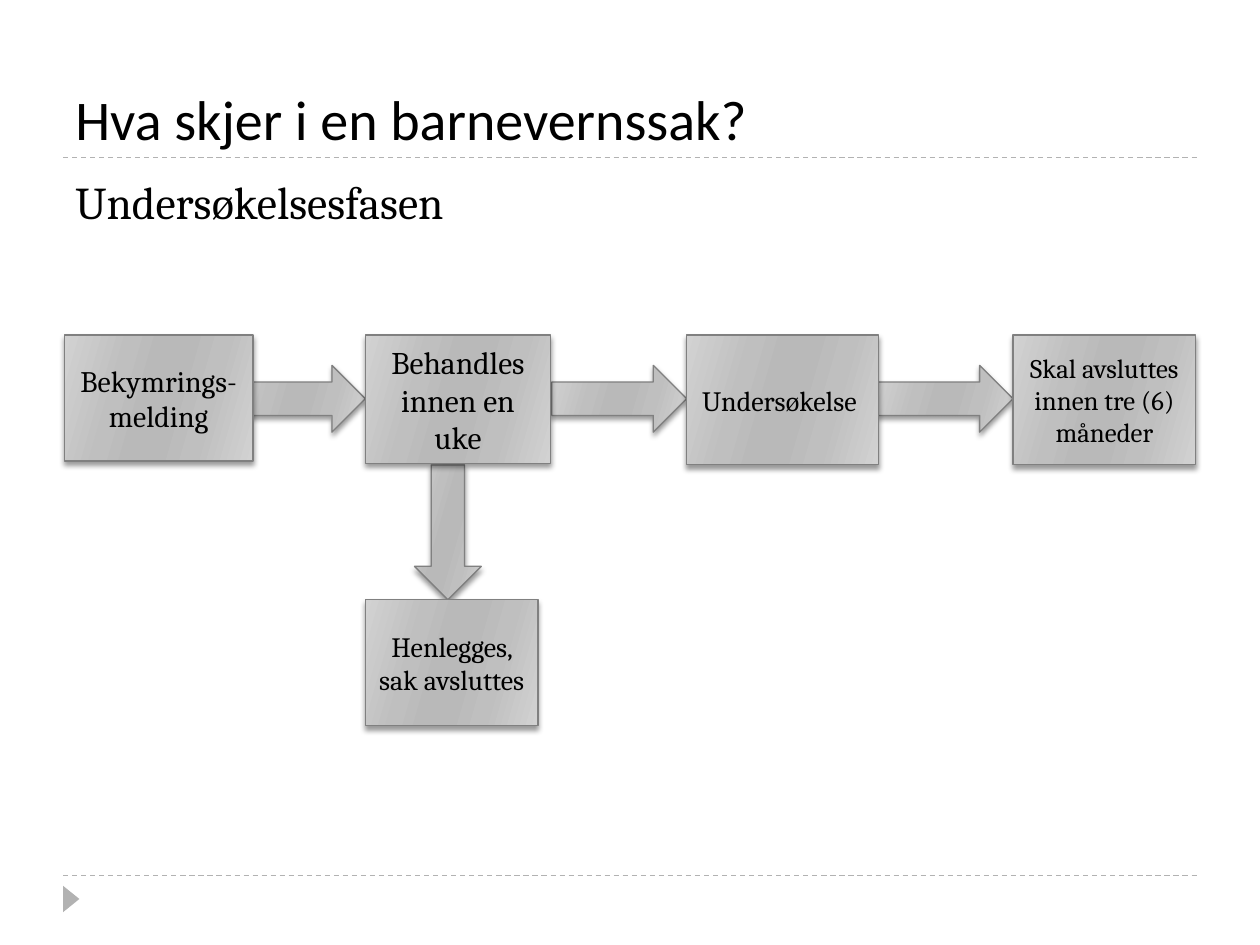
import dataclasses

import lxml.etree
import pptx
import pptx.dml.color
import pptx.enum.dml
import pptx.enum.shapes
import pptx.enum.text
import pptx.oxml
import pptx.oxml.ns
import pptx.util
from pptx.util import Inches

SHAPES = pptx.enum.shapes.MSO_SHAPE
ANCHOR = pptx.enum.text.MSO_ANCHOR
ALIGN = pptx.enum.text.PP_ALIGN


@dataclasses.dataclass(frozen=True)
class Theme:
    text: str = "000000"
    rule: str = "B2B2B2"
    outline: str = "808080"
    gradient: tuple = ((0, "D2D2D2"), (30, "BFBFBF"), (45, "B9B9B9"),
                       (55, "B9B9B9"), (73, "BFBFBF"), (100, "D2D2D2"))
    gradient_angle: int = 16
    line_width: float = 0.75
    heading_font: str = "Calibri"
    body_font: str = "Cambria"
    title_size: float = 32
    subtitle_size: float = 26


THEME = Theme()


def rgb(value):
    return pptx.dml.color.RGBColor.from_string(value)


def set_attributes(target, values):
    for name, value in values.items():
        setattr(target, name, value)


def append_effects(shape, content=""):
    """Give the shape its own effect list; an empty one means no shadow."""
    namespace = pptx.oxml.ns.nsdecls("a")
    effects = pptx.oxml.parse_xml(f"<a:effectLst {namespace}>{content}</a:effectLst>")
    shape._element.spPr.append(effects)


def write_text(shape, text, size, font=THEME.body_font, anchor=ANCHOR.TOP,
               align=ALIGN.LEFT, space_before=0):
    frame = shape.text_frame
    set_attributes(frame, {"word_wrap": True, "vertical_anchor": anchor})
    paragraph = frame.paragraphs[0]
    set_attributes(paragraph, {"alignment": align,
                               "space_before": pptx.util.Pt(space_before)})
    run = paragraph.add_run()
    run.text = text
    set_attributes(run.font, {"name": font, "size": pptx.util.Pt(size)})
    run.font.color.rgb = rgb(THEME.text)


def add_metal_shape(slide, kind, left, top, width, height):
    """Add a shape with the grey gradient, thin outline and soft shadow."""
    shape = slide.shapes.add_shape(kind, left, top, width, height)
    shape.fill.gradient()
    gradient = shape._element.spPr.find(pptx.oxml.ns.qn("a:gradFill"))
    stops = gradient.find(pptx.oxml.ns.qn("a:gsLst"))
    for stop in list(stops):
        stops.remove(stop)
    for position, color in THEME.gradient:
        stop = lxml.etree.SubElement(stops, pptx.oxml.ns.qn("a:gs"), pos=str(position * 1000))
        lxml.etree.SubElement(stop, pptx.oxml.ns.qn("a:srgbClr"), val=color)
    direction = gradient.find(pptx.oxml.ns.qn("a:lin"))
    direction.set("ang", str(THEME.gradient_angle * 60000))
    shape.line.color.rgb = rgb(THEME.outline)
    shape.line.width = pptx.util.Pt(THEME.line_width)
    append_effects(shape, '<a:outerShdw blurRad="38100" dist="25400" dir="5400000" '
                          'rotWithShape="0"><a:srgbClr val="000000">'
                          '<a:alpha val="40000"/></a:srgbClr></a:outerShdw>')
    return shape


def add_step(slide, text, size, left, top, width, height):
    step = add_metal_shape(slide, SHAPES.RECTANGLE, left, top, width, height)
    write_text(step, text, size, anchor=ANCHOR.MIDDLE, align=ALIGN.CENTER)


def draw_frame(slide, left, top, width, height):
    """Draw the dashed rules above and below the content and the corner marker."""
    for y in (top, top + height):
        rule = slide.shapes.add_connector(
            pptx.enum.shapes.MSO_CONNECTOR.STRAIGHT, left, y, left + width, y)
        set_attributes(rule.line, {"width": pptx.util.Pt(THEME.line_width),
                                   "dash_style": pptx.enum.dml.MSO_LINE.DASH})
        rule.line.color.rgb = rgb(THEME.rule)
        append_effects(rule)
    marker = slide.shapes.add_shape(
        SHAPES.ISOSCELES_TRIANGLE, left - Inches(0.04), top + height + Inches(0.12),
        Inches(0.21), Inches(0.13))
    set_attributes(marker, {"rotation": 90})
    marker.shadow.inherit = False
    marker.fill.solid()
    marker.fill.fore_color.rgb = rgb(THEME.rule)
    marker.line.fill.background()


def draw_headings(slide, left, top, width, height):
    """Set the title above the upper rule and the phase name below it."""
    title_height = Inches(1.08)
    body_top = top + Inches(1.16)
    title = slide.shapes.add_textbox(left, top, width, title_height)
    write_text(title, "Hva skjer i en barnevernssak?", THEME.title_size,
               font=THEME.heading_font, anchor=ANCHOR.BOTTOM)
    body = slide.shapes.add_textbox(left, body_top, width, top + height - body_top)
    write_text(body, "Undersøkelsesfasen", THEME.subtitle_size, space_before=6)


def draw_flow(slide, left, top, width, height):
    """Draw the row of steps, each fed by an arrow, and the branch to closure."""
    steps = (  # text, size, offset, width, height
        ("Bekymrings-melding", 17, 0, 1.5, 1),
        ("Behandles innen en uke", 18, 2.39, 1.47, 1.02),
        ("Undersøkelse ", 16, 4.94, 1.52, 1.03),
        ("Skal avsluttes innen tre (6) måneder", 15.3, 7.53, 1.45, 1.03),
    )
    arrow_length, arrow_breadth = Inches(1.07), Inches(0.53)
    for _, _, offset, _, _ in steps[1:]:
        add_metal_shape(slide, SHAPES.RIGHT_ARROW, left + Inches(offset) - arrow_length,
                        top + Inches(0.24), arrow_length, arrow_breadth)
    closure_left, closure_height = left + Inches(steps[1][2]), Inches(1)
    closure_top = top + height - closure_height
    add_metal_shape(slide, SHAPES.DOWN_ARROW, closure_left + Inches(0.39),
                    closure_top - arrow_length, arrow_breadth, arrow_length)
    for text, size, offset, step_width, step_height in steps:
        add_step(slide, text, size, left + Inches(offset), top,
                 Inches(step_width), Inches(step_height))
    add_step(slide, "Henlegges, sak avsluttes", 16, closure_left, closure_top,
             Inches(1.37), closure_height)


def main():
    presentation = pptx.Presentation()
    set_attributes(presentation, {"slide_width": Inches(10), "slide_height": Inches(7.5)})
    slide = presentation.slides.add_slide(presentation.slide_layouts[6])
    draw_frame(slide, Inches(0.5), Inches(1.25), Inches(9), Inches(5.7))
    draw_headings(slide, Inches(0.5), Inches(0.17), Inches(9), Inches(6.56))
    draw_flow(slide, Inches(0.51), Inches(2.66), Inches(8.98), Inches(3.1))
    presentation.save("out.pptx")


if __name__ == "__main__":
    main()
